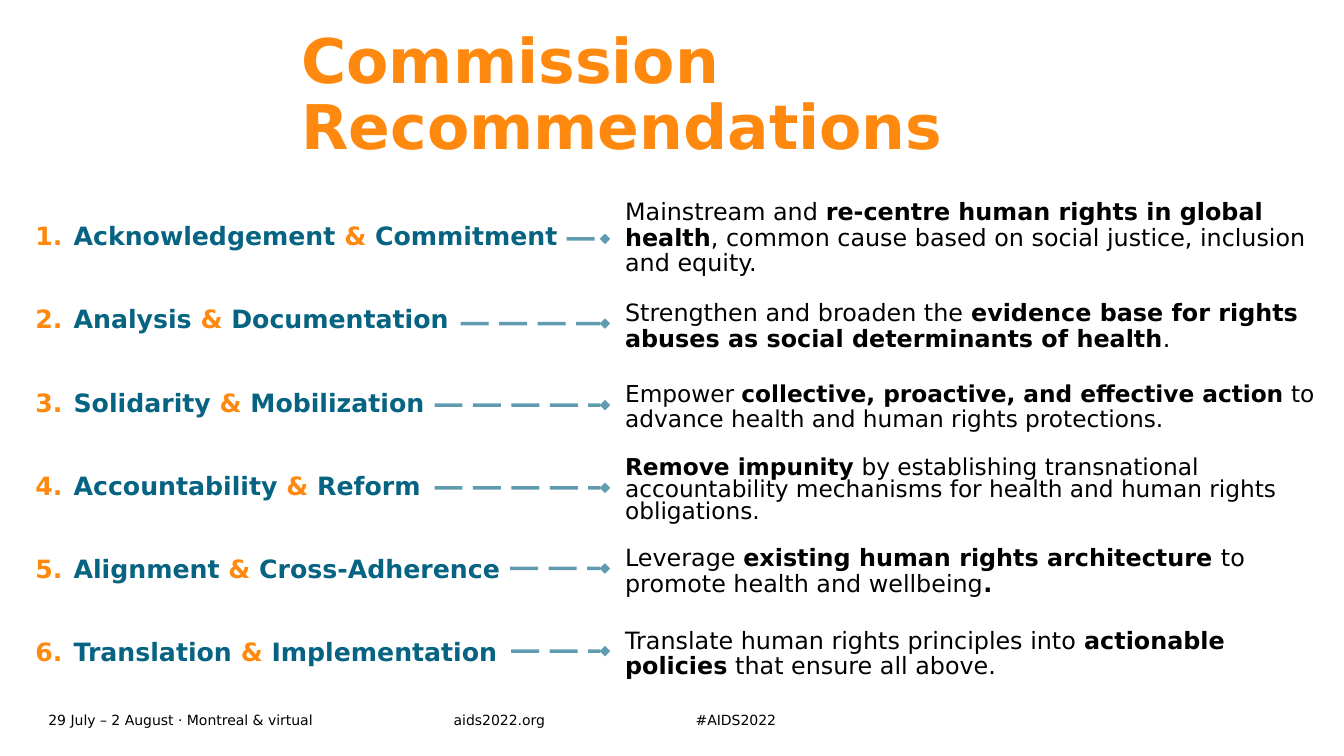
"""Build the Commission Recommendations slide."""
from dataclasses import dataclass

from lxml.etree import SubElement
from pptx import Presentation
from pptx.dml.color import RGBColor
from pptx.enum.dml import MSO_LINE
from pptx.enum.shapes import MSO_CONNECTOR, MSO_SHAPE
from pptx.enum.text import MSO_ANCHOR, MSO_AUTO_SIZE, PP_ALIGN
from pptx.oxml.ns import qn
from pptx.util import Inches, Pt


@dataclass(frozen=True)
class Theme:
    font: str = "DejaVu Sans"
    orange: str = "FF890E"
    teal: str = "076382"
    black: str = "000000"
    white: str = "FFFFFF"
    title: float = 44
    heading: float = 18
    detail: float = 17
    detail_small: float = 16.6
    footer: float = 10


T = Theme()


def write(p, text, size=T.detail, color=T.black, bold=False):
    r = p.add_run()
    r.text = text
    r.font.name = T.font
    r.font.size = Pt(size)
    r.font.bold = bold
    r.font.color.rgb = RGBColor.from_string(color)


def setup(tf, anchor=MSO_ANCHOR.MIDDLE):
    tf.word_wrap = True
    tf.auto_size = MSO_AUTO_SIZE.NONE
    tf.vertical_anchor = anchor
    tf.margin_left = tf.margin_right = tf.margin_top = tf.margin_bottom = 0
    p = tf.paragraphs[0]
    p.alignment = PP_ALIGN.LEFT
    p.space_before = Pt(0)
    return p


prs = Presentation()
prs.slide_width, prs.slide_height = Inches(13.33), Inches(7.5)
s = prs.slides.add_slide(prs.slide_layouts[1])

title = s.shapes.title
title.left, title.top = Inches(2.99), Inches(0.3)
title.width, title.height = Inches(9.26), Inches(1.34)
p = setup(title.text_frame, MSO_ANCHOR.TOP)
p.line_spacing = 0.9
write(p, "Commission Recommendations", size=T.title, color=T.orange, bold=True)

body = s.placeholders[1]
body.left, body.top = Inches(0.35), Inches(2.01)
body.width, body.height = Inches(5.28), Inches(4.82)
tf = body.text_frame
setup(tf)

# fmt: off
rows = [
    ("Acknowledgement", "Commitment", 5.62, 2.37, 1.91, 0.91, T.detail, 0.9,
     [("Mainstream and ", False), ("re-centre human rights in global health", True),
      (", common cause based on social justice, inclusion and equity.", False)]),
    ("Analysis", "Documentation", 4.57, 3.21, 2.88, 0.72, T.detail, 0.9,
     [("Strengthen and broaden the ", False),
      ("evidence base for rights abuses as social determinants of health", True),
      (".", False)]),
    ("Solidarity", "Mobilization", 4.31, 4.02, 3.68, 0.72, T.detail_small, 0.9,
     [("Empower ", False), ("collective, proactive, and effective action ", True),
      ("to advance health and human rights protections.", False)]),
    ("Accountability", "Reform", 4.31, 4.84, 4.51, 0.72, T.detail_small, 0.8,
     [("Remove impunity ", True),
      ("by establishing transnational accountability mechanisms for health "
       "and human rights obligations.", False)]),
    ("Alignment", "Cross-Adherence", 5.06, 5.64, 5.31, 0.72, T.detail, 0.9,
     [("Leverage ", False), ("existing human rights architecture ", True),
      ("to promote health and wellbeing", False), (".", True)]),
    ("Translation", "Implementation", 5.07, 6.46, 6.13, 0.72, T.detail, 0.9,
     [("Translate human rights principles into ", False), ("actionable policies", True),
      (" that ensure all above.", False)]),
]

for i, (first, second, start, y, top, height, size, spacing, detail) in enumerate(rows):
    p = tf.paragraphs[0] if i == 0 else tf.add_paragraph()
    pPr = p._p.get_or_add_pPr()
    pPr.set("marL", str(Inches(0.38)))
    pPr.set("indent", str(-Inches(0.38)))
    SubElement(SubElement(pPr, qn("a:buClr")), qn("a:srgbClr"), val=T.orange)
    SubElement(pPr, qn("a:buFont"), typeface=T.font)
    SubElement(pPr, qn("a:buAutoNum"), type="arabicPeriod")
    p.alignment = PP_ALIGN.LEFT
    p.line_spacing = 0.9
    p.space_before = Pt(40 if i else 0)
    for text, color in ((first, T.teal), (" & ", T.orange), (second, T.teal)):
        write(p, text, size=T.heading, color=color, bold=True)

    box = s.shapes.add_shape(MSO_SHAPE.RECTANGLE, Inches(6.2), Inches(top),
                             Inches(6.91), Inches(height))
    box.shadow.inherit = False
    box.fill.solid()
    box.fill.fore_color.rgb = RGBColor.from_string(T.white)
    box.line.fill.background()
    p = setup(box.text_frame)
    p.line_spacing = spacing
    for text, bold in detail:
        write(p, text, size=size, bold=bold)

    line = s.shapes.add_connector(MSO_CONNECTOR.STRAIGHT, Inches(start), Inches(y),
                                  Inches(6), Inches(y))
    line.line.color.rgb = RGBColor.from_string(T.teal)
    line.line.width = Pt(2.5)
    line.line.dash_style = MSO_LINE.LONG_DASH
    ln = line.line._get_or_add_ln()
    SubElement(ln, qn("a:tailEnd"), type="diamond")
    SubElement(line._element.spPr, qn("a:effectLst"))
    for fill, alpha in ((box._element.spPr, 79000), (ln, 63000)):
        color = fill.find(qn("a:solidFill")).find(qn("a:srgbClr"))
        SubElement(color, qn("a:alpha"), val=str(alpha))

footers = [
    ("29 July – 2 August · Montreal & virtual", 0.48, 4.02),
    ("aids2022.org", 4.5, 1.93),
    ("#AIDS2022", 6.9, 1.93),
]
for text, left, width in footers:
    box = s.shapes.add_textbox(Inches(left), Inches(7.02), Inches(width), Inches(0.24))
    write(setup(box.text_frame), text, size=T.footer)

prs.save("out.pptx")
